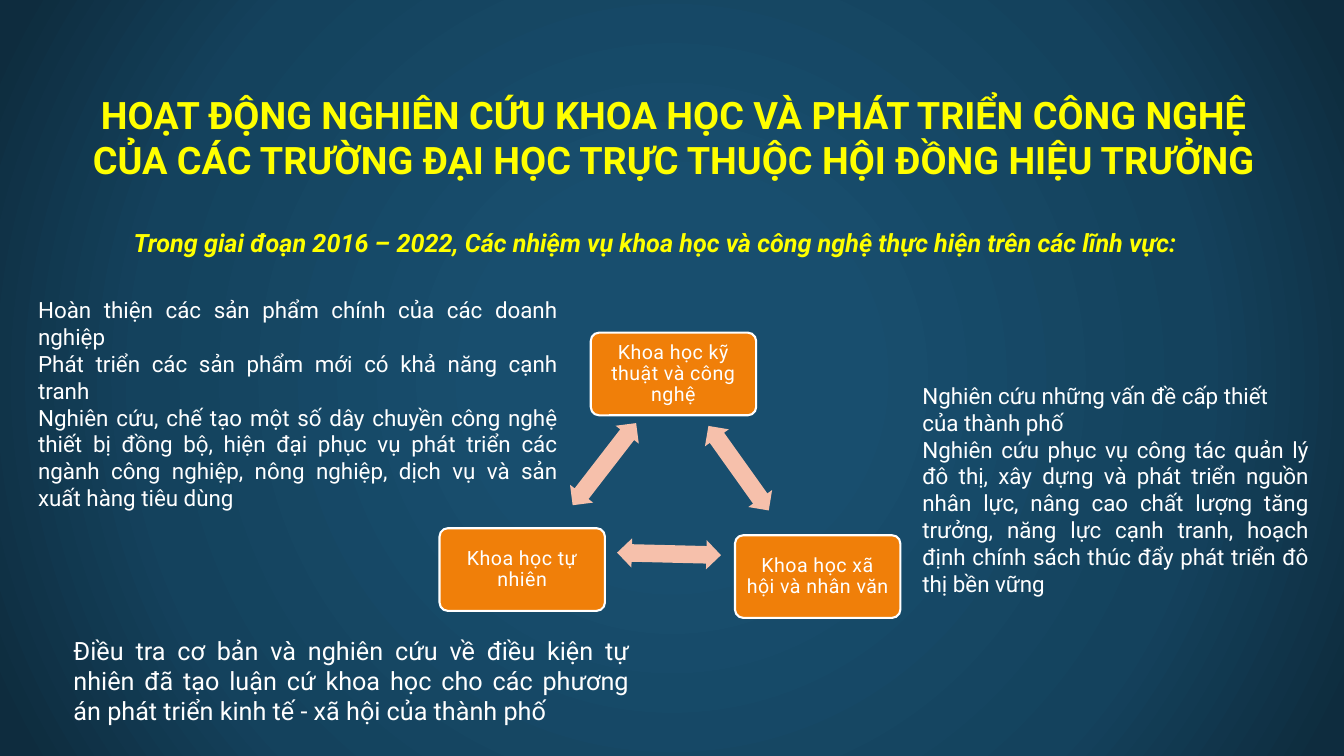
"""Build the slide on research activity in three fields of science."""
from lxml import etree
from pptx import Presentation
from pptx.enum import shapes, text
from pptx.oxml import ns
from pptx.util import Inches, Pt
from pptx.dml.color import RGBColor

FONT = "Roboto"
COLORS = {
    "heading": "FFFF00",
    "body": "FFFFFF",
    "field": "F07F09",
    "arrow": "F6C0AB",
}
BACKDROP_STOPS = [(0, "184E6E"), (23, "184E6E"), (69, "14425D"), (97, "0E2C3E")]
CENTER = text.PP_ALIGN.CENTER
JUSTIFY = text.PP_ALIGN.JUSTIFY
LEFT = text.PP_ALIGN.LEFT


def color(name):
    """Return the named colour."""
    return RGBColor.from_string(COLORS[name])


def paint_backdrop(slide):
    """Give the slide a circular gradient, lightest in the middle."""
    slide.background.fill.solid()
    properties = slide.element.find(".//" + ns.qn("p:bgPr"))
    gradient = etree.Element(ns.qn("a:gradFill"), rotWithShape="1")
    stops = etree.SubElement(gradient, ns.qn("a:gsLst"))
    for percent, value in BACKDROP_STOPS:
        stop = etree.SubElement(stops, ns.qn("a:gs"), pos=str(percent * 1000))
        etree.SubElement(stop, ns.qn("a:srgbClr"), val=value)
    circle = etree.SubElement(gradient, ns.qn("a:path"), path="circle")
    etree.SubElement(circle, ns.qn("a:fillToRect"), l="50000", t="50000", r="50000", b="50000")
    properties.replace(properties[0], gradient)


def format_text(frame, size, tint, aligns, bold=False, italic=False):
    """Format every paragraph of a frame, with one alignment for each."""
    frame.word_wrap = True
    for paragraph, align in zip(frame.paragraphs, aligns):
        paragraph.alignment = align
        for run in paragraph.runs:
            run.font.name = FONT
            run.font.size = Pt(size)
            run.font.bold = bold
            run.font.italic = italic
            run.font.color.rgb = color(tint)


def add_heading(slide, wording):
    """Place and format the slide title."""
    heading = slide.shapes.title
    heading.left, heading.top = Inches(0.75), Inches(0.67)
    heading.width, heading.height = Inches(11.86), Inches(1.38)
    heading.text_frame.text = wording
    heading.text_frame.auto_size = text.MSO_AUTO_SIZE.NONE
    heading.text_frame.vertical_anchor = text.MSO_ANCHOR.MIDDLE
    format_text(heading.text_frame, 27, "heading", [CENTER], bold=True)


def add_note(slide, box, lines, size, aligns, tint="body", emphasis=False):
    """Add a text box with one paragraph for each line."""
    frame = slide.shapes.add_textbox(*map(Inches, box)).text_frame
    frame.text = "\n".join(lines)
    format_text(frame, size, tint, aligns, bold=emphasis, italic=emphasis)


def add_field(slide, left, top, label):
    """Add a rounded box naming one field of science."""
    field = slide.shapes.add_shape(
        shapes.MSO_SHAPE.ROUNDED_RECTANGLE, Inches(left), Inches(top), Inches(1.64), Inches(0.82))
    field.adjustments[0] = 0.1
    field.shadow.inherit = False
    field.fill.solid()
    field.fill.fore_color.rgb = color("field")
    field.line.color.rgb = color("body")
    field.line.width = Pt(1.5)
    frame = field.text_frame
    frame.margin_left = frame.margin_right = Inches(0.08)
    frame.margin_top = frame.margin_bottom = Inches(0.08)
    frame.vertical_anchor = text.MSO_ANCHOR.MIDDLE
    frame.text = label
    format_text(frame, 14, "body", [CENTER])
    paragraph = frame.paragraphs[0]
    paragraph.line_spacing = 0.9
    paragraph.runs[0].font._element.set("spc", "30")


def add_exchange(slide, left, top, angle):
    """Add a double arrow between two fields."""
    arrow = slide.shapes.add_shape(
        shapes.MSO_SHAPE.LEFT_RIGHT_ARROW, Inches(left), Inches(top), Inches(1.03), Inches(0.29))
    arrow.adjustments[0] = 0.6
    arrow.adjustments[1] = 0.5
    arrow.rotation = angle
    arrow.shadow.inherit = False
    arrow.fill.solid()
    arrow.fill.fore_color.rgb = color("arrow")
    arrow.line.fill.background()


def main():
    """Build and save the slide."""
    deck = Presentation()
    deck.slide_width, deck.slide_height = Inches(13.33), Inches(7.5)
    slide = deck.slides.add_slide(deck.slide_layouts[5])
    paint_backdrop(slide)
    add_heading(slide, "HOẠT ĐỘNG NGHIÊN CỨU KHOA HỌC VÀ PHÁT TRIỂN CÔNG NGHỆ "
                       "CỦA CÁC TRƯỜNG ĐẠI HỌC TRỰC THUỘC HỘI ĐỒNG HIỆU TRƯỞNG")
    add_note(slide, (0.87, 2.21, 11.26, 0.4), [
        "Trong giai đoạn 2016 – 2022, Các nhiệm vụ khoa học và công nghệ "
        "thực hiện trên các lĩnh vực:",
    ], 18, [CENTER], tint="heading", emphasis=True)

    for left, top, label in [
        (5.86, 3.3, "Khoa học kỹ thuật và công nghệ"),
        (7.29, 5.31, "Khoa học xã hội và nhân văn"),
        (4.36, 5.24, "Khoa học tự nhiên"),
    ]:
        add_field(slide, left, top, label)
    for left, top, angle in [(6.81, 4.5, 54.5), (6.12, 5.35, 181.4), (5.48, 4.46, 307.7)]:
        add_exchange(slide, left, top, angle)

    add_note(slide, (0.28, 2.89, 5.35, 2.26), [
        "Hoàn thiện các sản phẩm chính của các doanh nghiệp",
        "Phát triển các sản phẩm mới có khả năng cạnh tranh",
        "Nghiên cứu, chế tạo một số dây chuyền công nghệ thiết bị đồng bộ, hiện đại "
        "phục vụ phát triển các ngành công nghiệp, nông nghiệp, dịch vụ và sản xuất "
        "hàng tiêu dùng",
    ], 16, [JUSTIFY] * 3)
    add_note(slide, (0.63, 6.25, 5.71, 1.01), [
        "Điều tra cơ bản và nghiên cứu về điều kiện tự nhiên đã tạo luận cứ khoa học "
        "cho các phương án phát triển kinh tế - xã hội của thành phố",
    ], 18, [JUSTIFY])
    add_note(slide, (9.05, 3.74, 4.03, 2.26), [
        "Nghiên cứu những vấn đề cấp thiết của thành phố",
        "Nghiên cứu phục vụ công tác quản lý đô thị, xây dựng và phát triển nguồn "
        "nhân lực, nâng cao chất lượng tăng trưởng, năng lực cạnh tranh, hoạch định "
        "chính sách thúc đẩy phát triển đô thị bền vững",
    ], 16, [LEFT, JUSTIFY])
    deck.save("out.pptx")


if __name__ == "__main__":
    main()
